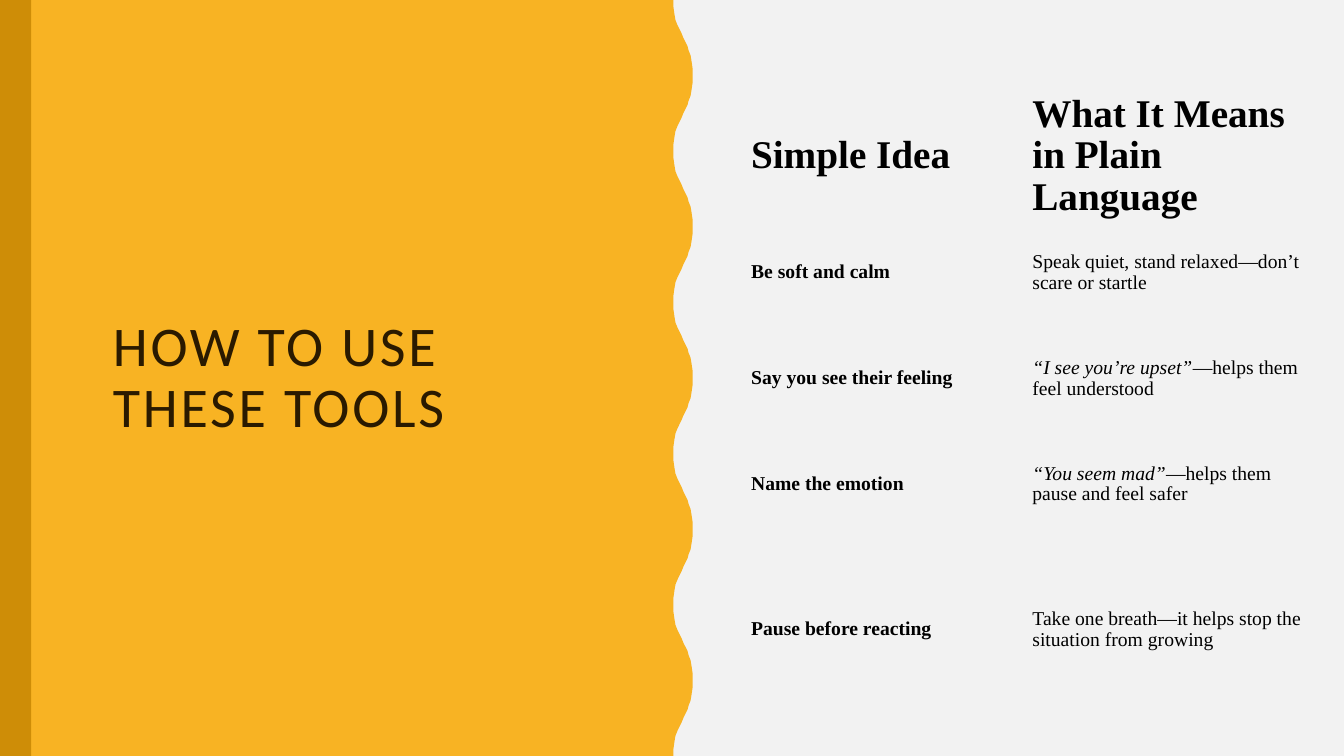
from pptx import Presentation
from pptx.dml.color import RGBColor
from pptx.enum.shapes import MSO_SHAPE
from pptx.enum.text import MSO_ANCHOR, MSO_AUTO_SIZE, PP_ALIGN
from pptx.util import Inches, Pt

RECT = MSO_SHAPE.RECTANGLE
MIDDLE = MSO_ANCHOR.MIDDLE
LEFT = PP_ALIGN.LEFT
NO_FIT = MSO_AUTO_SIZE.NONE

PAPER = RGBColor(0xF3, 0xF3, 0xF2)
PANEL = RGBColor(0xF2, 0xF2, 0xF2)
AMBER = RGBColor(0xF8, 0xB3, 0x23)
DARK_AMBER = RGBColor(0xCE, 0x8D, 0x07)
BROWN = RGBColor(0x2A, 0x1A, 0x00)
BLACK = RGBColor(0, 0, 0)
NO_STYLE_NO_GRID = "{2D5ABB26-0587-4C30-8999-92F81FD0307C}"


def paint(shape, color):
    shape.shadow.inherit = False
    shape.fill.solid()
    shape.fill.fore_color.rgb = color
    shape.line.fill.background()


prs = Presentation()
prs.slide_width, prs.slide_height = Inches(13.33), Inches(7.5)
s = prs.slides.add_slide(prs.slide_layouts[5])
s.background.fill.solid()
s.background.fill.fore_color.rgb = PAPER

# Right panel
paint(s.shapes.add_shape(RECT, Inches(6.26), 0, Inches(7.07), Inches(7.5)), PANEL)

# Wavy edge: each 1.5 inch wave is a half wave followed by its mirror
half = [(6.68, 0), (6.68, 0.07), (6.69, 0.14), (6.7, 0.2), (6.72, 0.25),
        (6.74, 0.29), (6.76, 0.33), (6.78, 0.38), (6.8, 0.42), (6.82, 0.46),
        (6.83, 0.5), (6.85, 0.55), (6.86, 0.61), (6.87, 0.68), (6.87, 0.75)]
wave = half + [(x, 1.5 - y) for x, y in half[-2::-1]]
edge = [(x, y + 1.5 * i) for i in range(5) for x, y in wave]
builder = s.shapes.build_freeform(Inches(5.91), 0, scale=1.0)
builder.add_line_segments(
    [(Inches(x), Inches(y)) for x, y in edge + [(5.91, 7.5)]], close=True)
paint(builder.convert_to_shape(), AMBER)

# Left panel and side strip
for left, width, color in [(0.22, 5.83, AMBER), (0, 0.31, DARK_AMBER)]:
    paint(s.shapes.add_shape(RECT, Inches(left), 0, Inches(width), Inches(7.5)), color)

# Title, brought in front of the panels
title = s.shapes.title
s.shapes._spTree.append(title._element)
title.left, title.top = Inches(1.02), Inches(0.58)
title.width, title.height = Inches(4.88), Inches(6.36)
tf = title.text_frame
tf.word_wrap = True
tf.auto_size = NO_FIT
tf.vertical_anchor = MIDDLE
p = tf.paragraphs[0]
p.alignment = LEFT
p.line_spacing = 0.9
r = p.add_run()
r.text = "HOW TO USE THESE TOOLS"
r.font.size, r.font.name = Pt(40), "Calibri"
r.font.color.rgb = BROWN
r._r.get_or_add_rPr().set("spc", "200")

# Table: idea, quoted words, plain meaning
rows = [
    ("Simple Idea", "", "What It Means in Plain Language"),
    ("Be soft and calm", "", "Speak quiet, stand relaxed—don’t scare or startle"),
    ("Say you see their feeling", "“I see you’re upset”", "—helps them feel understood"),
    ("Name the emotion", "“You seem mad”", "—helps them pause and feel safer"),
    ("Pause before reacting", "",
     "Take one breath—it helps stop the situation from growing"),
]
frame = s.shapes.add_table(len(rows), 2, Inches(7.43), Inches(0.92),
                           Inches(5.58), Inches(6.03))
table = frame.table
table.first_row = table.horz_banding = False
table._tbl.tblPr.find("{*}tableStyleId").text = NO_STYLE_NO_GRID
for column in table.columns:
    column.width = Inches(2.79)
for row, height in zip(table.rows, [1.05] * 4 + [1.83]):
    row.height = Inches(height)

for i, (idea, quote, meaning) in enumerate(rows):
    header = i == 0
    cells = [[(idea, True, False)],
             [(quote, False, True), (meaning, header, False)]]
    for j, runs in enumerate(cells):
        cell = table.cell(i, j)
        cell.fill.background()
        cell.vertical_anchor = MIDDLE
        cell.margin_left = cell.margin_right = Inches(0.02)
        cell.margin_top = cell.margin_bottom = Inches(0.01)
        p = cell.text_frame.paragraphs[0]
        p.line_spacing = 0.96
        for text, bold, italic in runs:
            if not text:
                continue
            r = p.add_run()
            r.text = text
            look = {"name": "Times New Roman", "size": Pt(28 if header else 14),
                    "bold": bold, "italic": italic}
            for key, value in look.items():
                setattr(r.font, key, value)
            r.font.color.rgb = BLACK

prs.save("out.pptx")
